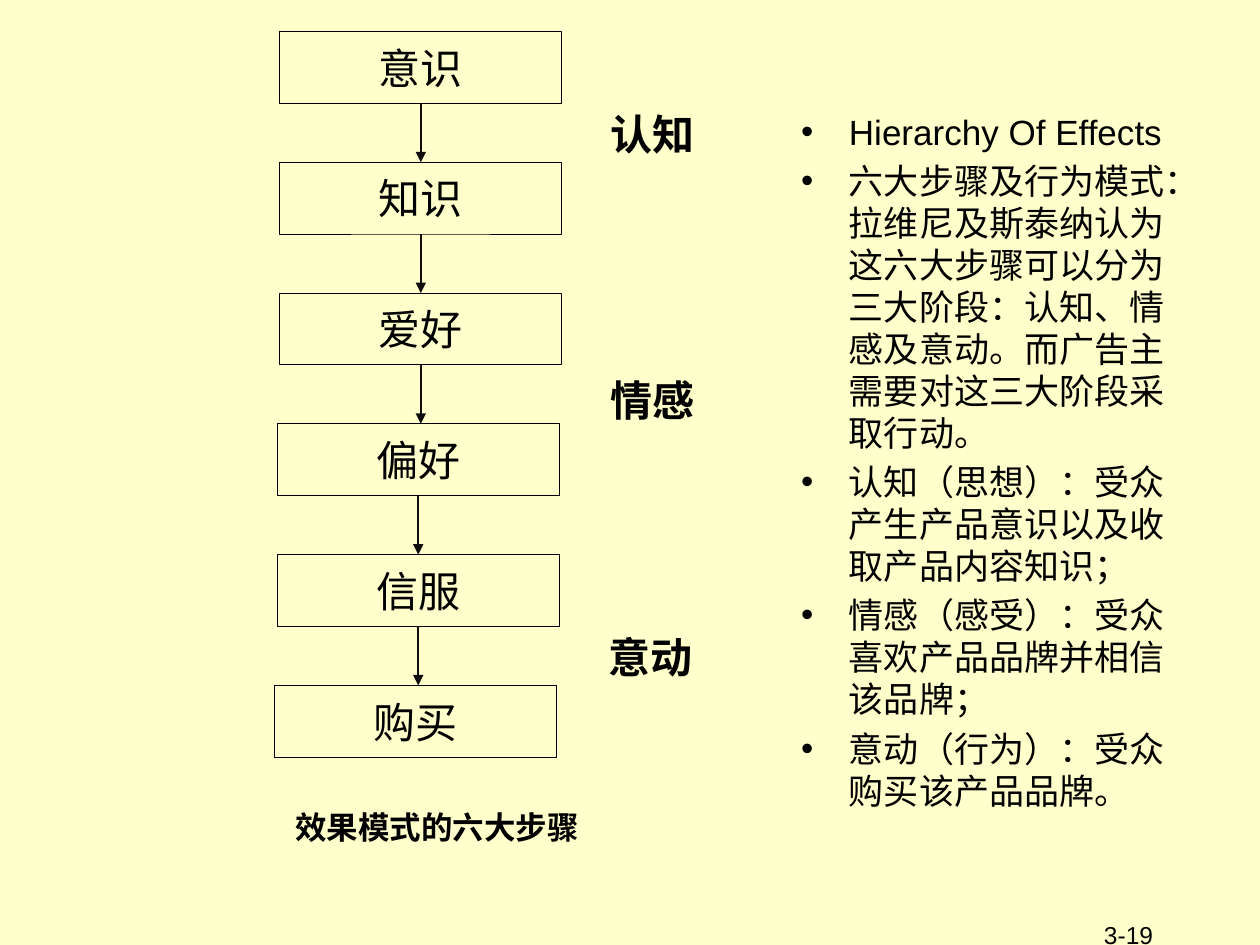
from dataclasses import dataclass
from typing import Optional

import pptx
import pptx.dml.color
import pptx.enum.shapes
import pptx.enum.text
import pptx.oxml.ns
import pptx.util
from lxml import etree

ALIGN = pptx.enum.text.PP_ALIGN
ANCHOR = pptx.enum.text.MSO_ANCHOR


@dataclass(frozen=True)
class Theme:
    background: str = "FFFFCC"
    ink: str = "000000"
    arrow: str = "0D0D0D"
    latin: str = "Arial"
    chinese: str = "Noto Sans CJK SC"
    step_size: int = 24
    body_size: int = 20
    caption_size: int = 18
    number_size: int = 14
    leading: float = 1.2


@dataclass(frozen=True)
class Area:
    """A rectangle in percent of the slide's width and height."""
    left: float
    top: float
    width: float
    height: float

    @property
    def bottom(self) -> float:
        return self.top + self.height

    @property
    def center(self) -> float:
        return self.left + self.width / 2


@dataclass(frozen=True)
class Label:
    text: str
    area: Area
    size: int
    bold: bool = True
    align: ALIGN = ALIGN.CENTER


THEME = Theme()
WIDTH, HEIGHT = pptx.util.Inches(10), pptx.util.Inches(7.5)

STEP_TOP, STEP_PITCH = 3.33, 13.84
STEPS = [
    (name, Area(left, STEP_TOP + row * STEP_PITCH, 22.4, 7.6))
    for row, (name, left) in enumerate([
        ("意识", 22.2), ("知识", 22.2), ("爱好", 22.2),
        ("偏好", 22), ("信服", 22), ("购买", 21.8),
    ])
]
LABELS = [
    Label(name, Area(left, top, 17.8, 6.67), THEME.step_size)
    for name, left, top in [
        ("认知", 42.9, 10.8), ("情感", 42.9, 38.93), ("意动", 42.7, 66.13),
    ]
] + [
    Label("效果模式的六大步骤", Area(13.9, 84.67, 41.6, 5.73), THEME.caption_size),
    Label("3-19", Area(71.7, 95.6, 20.8, 6.67), THEME.number_size, False, ALIGN.RIGHT),
]
BODY_AREA = Area(62.6, 11.07, 32.4, 66.53)
BODY = [
    "Hierarchy Of Effects",
    "六大步骤及行为模式：拉维尼及斯泰纳认为这六大步骤可以分为三大阶段："
    "认知、情感及意动。而广告主需要对这三大阶段采取行动。",
    "认知（思想）：受众产生产品意识以及收取产品内容知识；",
    "情感（感受）：受众喜欢产品品牌并相信该品牌；",
    "意动（行为）：受众购买该产品品牌。",
]


def across(percent: float) -> int:
    return round(WIDTH * percent / 100)


def down(percent: float) -> int:
    return round(HEIGHT * percent / 100)


def frame(area: Area) -> tuple[int, int, int, int]:
    return across(area.left), down(area.top), across(area.width), down(area.height)


def color(value: str) -> pptx.dml.color.RGBColor:
    return pptx.dml.color.RGBColor.from_string(value)


def add_run(paragraph, text: str, size: int, bold: bool = False,
            leading: Optional[float] = None) -> None:
    run = paragraph.add_run()
    run.text = text
    run.font.size = pptx.util.Pt(size)
    run.font.bold = bold
    run.font.color.rgb = color(THEME.ink)
    run.font.name = THEME.latin
    east_asian = etree.SubElement(run.font._element, pptx.oxml.ns.qn("a:ea"))
    east_asian.set("typeface", THEME.chinese)
    if leading:
        paragraph.line_spacing = pptx.util.Pt(size * leading)


def add_step(slide, name: str, area: Area) -> None:
    shape = slide.shapes.add_shape(
        pptx.enum.shapes.MSO_SHAPE.RECTANGLE, *frame(area))
    shape.shadow.inherit = False
    shape.fill.background()
    shape.line.color.rgb = color(THEME.ink)
    shape.line.width = pptx.util.Pt(0.5)
    shape.text_frame.vertical_anchor = ANCHOR.MIDDLE
    paragraph = shape.text_frame.paragraphs[0]
    paragraph.alignment = ALIGN.CENTER
    add_run(paragraph, name, THEME.step_size, leading=THEME.leading)


def add_arrow(slide, upper: Area, lower: Area) -> None:
    middle = across(upper.center)
    connector = slide.shapes.add_connector(
        pptx.enum.shapes.MSO_CONNECTOR.STRAIGHT,
        middle, down(upper.bottom), middle, down(lower.top))
    connector.line.color.rgb = color(THEME.arrow)
    connector.line.width = pptx.util.Pt(1)
    tail = etree.SubElement(connector.line._get_or_add_ln(),
                            pptx.oxml.ns.qn("a:tailEnd"))
    tail.set("type", "triangle")
    etree.SubElement(connector._element.spPr, pptx.oxml.ns.qn("a:effectLst"))


def add_label(slide, label: Label) -> None:
    text_frame = slide.shapes.add_textbox(*frame(label.area)).text_frame
    text_frame.word_wrap = True
    text_frame.vertical_anchor = ANCHOR.MIDDLE
    paragraph = text_frame.paragraphs[0]
    paragraph.alignment = label.align
    add_run(paragraph, label.text, label.size, label.bold)


def add_bullet(paragraph) -> None:
    properties = paragraph._element.get_or_add_pPr()
    indent = pptx.util.Inches(0.38)
    properties.set("marL", str(indent))
    properties.set("indent", str(-indent))
    font = etree.SubElement(properties, pptx.oxml.ns.qn("a:buFont"))
    font.set("typeface", THEME.latin)
    bullet = etree.SubElement(properties, pptx.oxml.ns.qn("a:buChar"))
    bullet.set("char", "•")


def add_body(slide) -> None:
    text_frame = slide.shapes.add_textbox(*frame(BODY_AREA)).text_frame
    text_frame.word_wrap = True
    for index, text in enumerate(BODY):
        paragraph = text_frame.add_paragraph() if index else text_frame.paragraphs[0]
        paragraph.space_before = pptx.util.Pt(THEME.body_size * 0.2)
        add_run(paragraph, text, THEME.body_size, leading=THEME.leading)
        add_bullet(paragraph)


def main() -> None:
    presentation = pptx.Presentation()
    presentation.slide_width, presentation.slide_height = WIDTH, HEIGHT
    slide = presentation.slides.add_slide(presentation.slide_layouts[6])
    slide.background.fill.solid()
    slide.background.fill.fore_color.rgb = color(THEME.background)

    add_body(slide)
    for name, area in STEPS:
        add_step(slide, name, area)
    for (_, upper), (_, lower) in zip(STEPS, STEPS[1:]):
        add_arrow(slide, upper, lower)
    for label in LABELS:
        add_label(slide, label)
    presentation.save("out.pptx")


if __name__ == "__main__":
    main()
